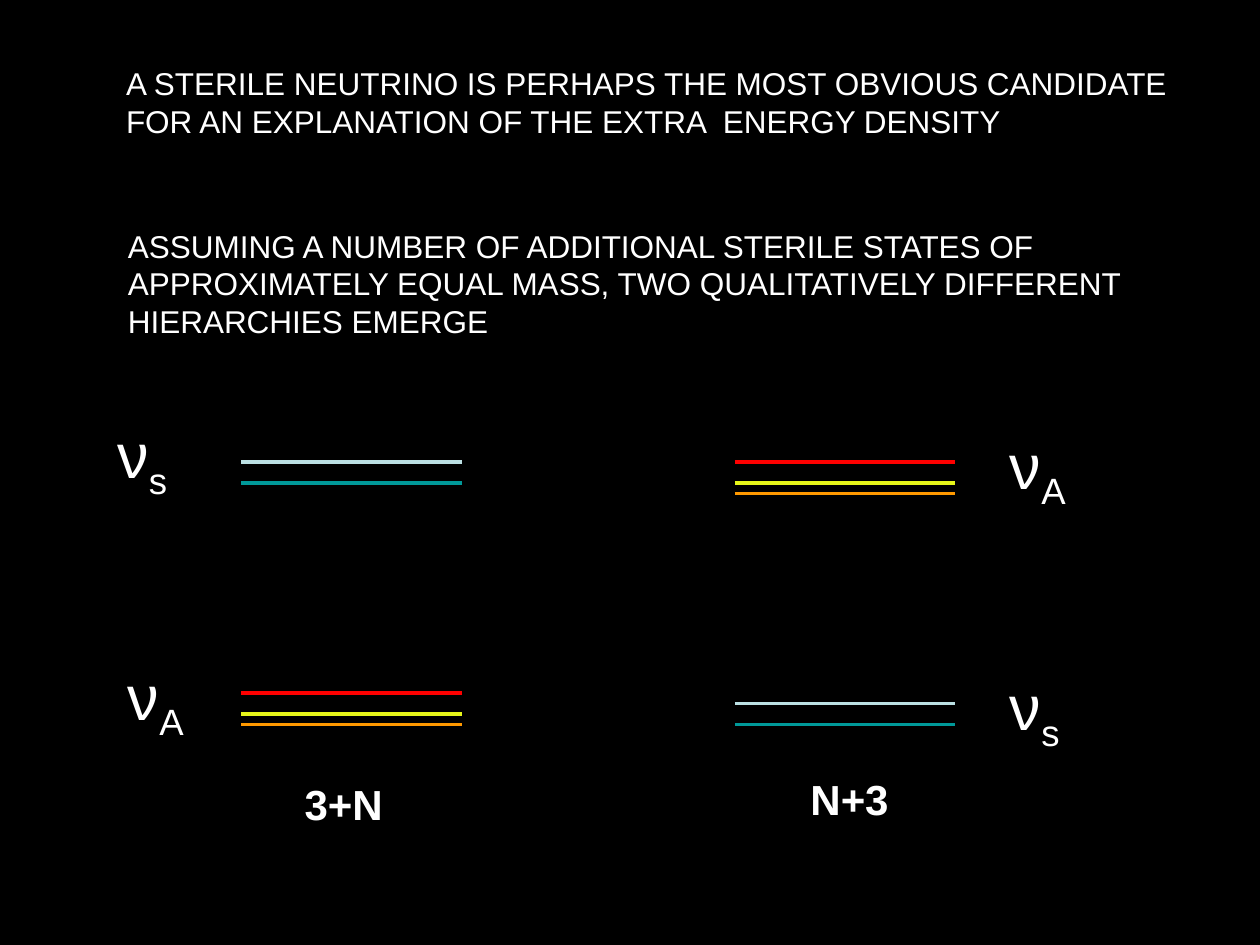
from pptx import Presentation
from pptx.dml.color import RGBColor
from pptx.enum.shapes import MSO_CONNECTOR as Conn
from pptx.enum.text import MSO_ANCHOR as Anchor, MSO_AUTO_SIZE as Auto, PP_ALIGN as Align
from pptx.oxml.ns import qn
from pptx.util import Pt
from lxml.etree import SubElement

BLACK = RGBColor(0x00, 0x00, 0x00)
WHITE = RGBColor(0xFF, 0xFF, 0xFF)
RED = RGBColor(0xFF, 0x00, 0x00)
YELLOW = RGBColor(0xE6, 0xF6, 0x1A)
ORANGE = RGBColor(0xFF, 0x99, 0x00)
PALE = RGBColor(0xBB, 0xE0, 0xE3)
TEAL = RGBColor(0x00, 0x99, 0x99)

ACTIVE = ((0, RED), (12, YELLOW), (18, ORANGE))
STERILE = ((0, PALE), (12, TEAL))
LEVEL_WIDTH = 126
LEFT_X, RIGHT_X = 138, 420

TITLE = (
    "A STERILE NEUTRINO IS PERHAPS THE MOST OBVIOUS CANDIDATE",
    "FOR AN EXPLANATION OF THE EXTRA  ENERGY DENSITY",
)
ASSUMPTION = (
    "ASSUMING A NUMBER OF ADDITIONAL STERILE STATES OF",
    "APPROXIMATELY EQUAL MASS, TWO QUALITATIVELY DIFFERENT",
    "HIERARCHIES EMERGE",
)


def style_run(r, size, bold=False):
    """Give a run the slide's font."""
    for name, value in {"name": "Arial", "size": Pt(size), "bold": bold}.items():
        setattr(r.font, name, value)
    r.font.color.rgb = WHITE


def fill_text(sp, box, lines, size, bold=False):
    """Place a text shape and write one paragraph per line."""
    for name, value in zip(("left", "top", "width", "height"), box):
        setattr(sp, name, Pt(value))
    tf = sp.text_frame
    tf.text = "\n".join(lines)
    layout = {"word_wrap": False, "auto_size": Auto.SHAPE_TO_FIT_TEXT,
              "vertical_anchor": Anchor.TOP}
    for name, value in layout.items():
        setattr(tf, name, value)
    for p in tf.paragraphs:
        p.alignment = Align.LEFT
        for r in p.runs:
            style_run(r, size, bold)


def add_text(s, box, lines, size, bold=False):
    """Add a text box and return it."""
    sp = s.shapes.add_textbox(0, 0, 0, 0)
    fill_text(sp, box, lines, size, bold)
    return sp


def add_neutrino(s, x, y, width, flavour):
    """Add a neutrino symbol with its flavour as a subscript."""
    sp = add_text(s, (x, y, width, 50.4), ["ν"], 36)
    r = sp.text_frame.paragraphs[0].add_run()
    r.text = flavour
    style_run(r, 36)
    r.font._element.set("baseline", "-25000")


def add_levels(s, x, y, levels):
    """Draw a group of mass levels from its top line down."""
    for dy, color in levels:
        line = s.shapes.add_connector(
            Conn.STRAIGHT, Pt(x), Pt(y + dy), Pt(x + LEVEL_WIDTH), Pt(y + dy))
        line.line.color.rgb = color
        line.line.width = Pt(2.25)
        SubElement(line._element.spPr, qn("a:effectLst"))


def main():
    """Build the slide on neutrino mass hierarchies."""
    prs = Presentation()
    prs.slide_width, prs.slide_height = Pt(720), Pt(540)
    s = prs.slides.add_slide(prs.slide_layouts[5])
    s.background.fill.solid()
    s.background.fill.fore_color.rgb = BLACK

    fill_text(s.shapes.title, (64.8, 33.1, 612.7, 50.4), TITLE, 18)
    add_text(s, (66, 126, 590.4, 72), ASSUMPTION, 18)

    for x, y, levels in ((LEFT_X, 264, STERILE), (LEFT_X, 396, ACTIVE),
                         (RIGHT_X, 264, ACTIVE), (RIGHT_X, 402, STERILE)):
        add_levels(s, x, y, levels)

    for x, y, width, flavour in ((60, 234, 45.4, "s"), (66, 372, 49, "A"),
                                 (570, 240, 49, "A"), (570, 378, 45.4, "s")):
        add_neutrino(s, x, y, width, flavour)

    for x, y, name in ((167, 441.4, "3+N"), (456, 438.5, "N+3")):
        add_text(s, (x, y, 59, 36), [name], 24, bold=True)

    prs.save("out.pptx")


if __name__ == "__main__":
    main()
